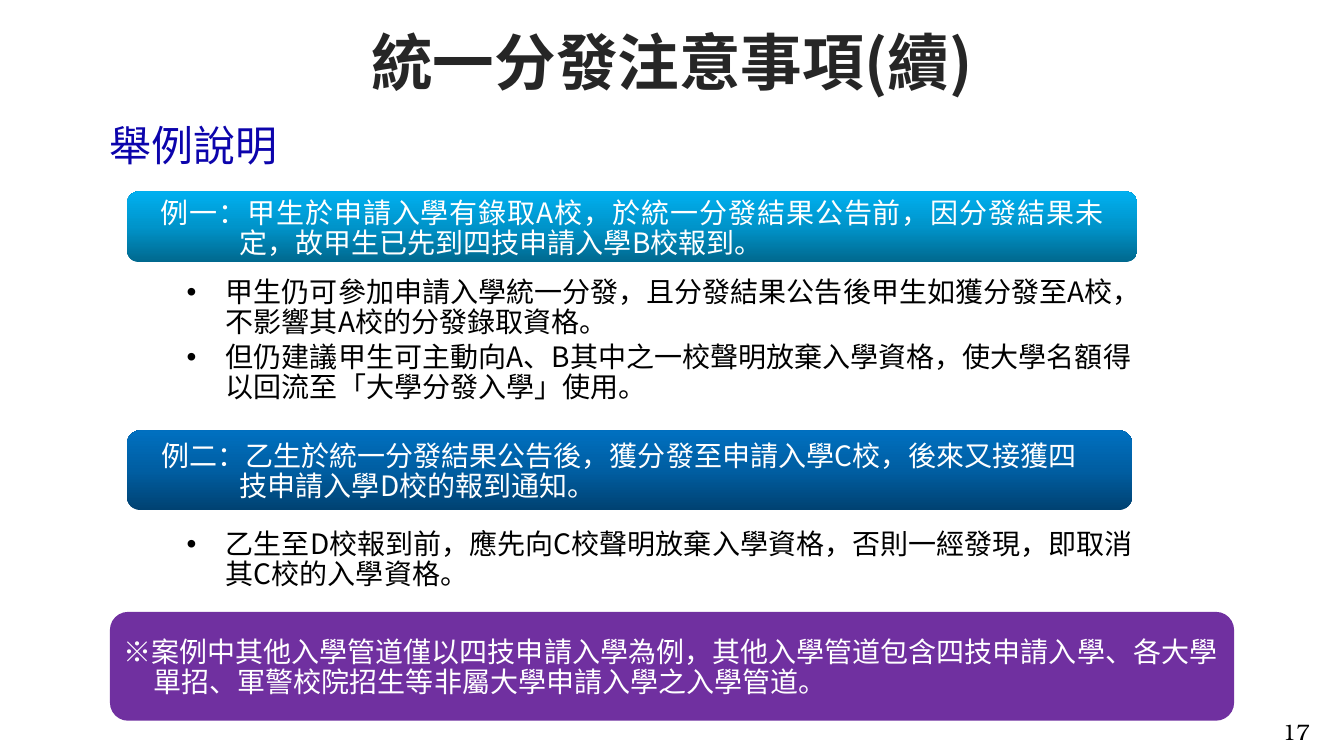
from copy import deepcopy
from dataclasses import dataclass

from lxml import etree
from pptx import Presentation
from pptx.dml.color import RGBColor
from pptx.enum.shapes import MSO_SHAPE
from pptx.enum.text import MSO_ANCHOR, MSO_AUTO_SIZE, PP_ALIGN
from pptx.oxml.ns import qn
from pptx.util import Pt

PX = 9144  # one px is 0.01 inch
SANS = "Noto Sans CJK SC"
SERIF = "TeX Gyre Bonum"

WHITE = RGBColor(0xFF, 0xFF, 0xFF)
BLACK = RGBColor(0x00, 0x00, 0x00)
INK = RGBColor(0x26, 0x26, 0x26)
NAVY = RGBColor(0x0C, 0x04, 0xAC)
PURPLE = RGBColor(0x70, 0x30, 0xA0)
CYANS = (RGBColor(0x00, 0x68, 0x8E), RGBColor(0x00, 0x94, 0xCA), RGBColor(0x00, 0xB0, 0xF0))
BLUES = (RGBColor(0x00, 0x42, 0x72), RGBColor(0x00, 0x5E, 0xA2), RGBColor(0x00, 0x70, 0xC0))

ROUND = MSO_SHAPE.ROUNDED_RECTANGLE
TOP, MIDDLE = MSO_ANCHOR.TOP, MSO_ANCHOR.MIDDLE
LEFT, CENTER, JUSTIFY = PP_ALIGN.LEFT, PP_ALIGN.CENTER, PP_ALIGN.JUSTIFY
NO_FIT = MSO_AUTO_SIZE.NONE


@dataclass
class Box:
    left: int
    top: int
    width: int
    height: int

    def emu(self) -> list[int]:
        return [n * PX for n in (self.left, self.top, self.width, self.height)]


@dataclass
class Style:
    size: int
    color: RGBColor
    font: str = SANS
    bold: bool = False
    align: PP_ALIGN = LEFT
    pitch: float = 0  # line pitch in points, 0 for single
    hang: int = 0
    bullet: bool = False


@dataclass
class Panel:
    box: Box
    fills: tuple[RGBColor, ...]
    pad: int
    style: Style
    text: str


@dataclass
class Points:
    box: Box
    lines: list[str]


ITEM = Style(20, BLACK, pitch=21.5, hang=39, bullet=True)

LISTS = [
    Points(Box(97, 235, 1131, 191), [
        "甲生仍可參加申請入學統一分發，且分發結果公告後甲生如獲分發至A校，不影響其A校的分發錄取資格。",
        "但仍建議甲生可主動向A、B其中之一校聲明放棄入學資格，使大學名額得以回流至「大學分發入學」使用。",
    ]),
    Points(Box(97, 485, 1138, 105), [
        "乙生至D校報到前，應先向C校聲明放棄入學資格，否則一經發現，即取消其C校的入學資格。",
    ]),
]

PANELS = [
    Panel(Box(126, 190, 1002, 70), CYANS, 30,
          Style(20, WHITE, align=JUSTIFY, pitch=21.5, hang=78),
          "例一：甲生於申請入學有錄取A校，於統一分發結果公告前，因分發結果未定，故甲生已先到四技申請入學B校報到。"),
    Panel(Box(126, 427, 997, 79), BLUES, 30,
          Style(20, WHITE, pitch=21.5, hang=78),
          "例二：乙生於統一分發結果公告後，獲分發至申請入學C校，後來又接獲四技申請入學D校的報到通知。"),
    Panel(Box(109, 607, 1115, 108), (PURPLE,), 8,
          Style(20, WHITE, pitch=21.5, hang=30),
          "※案例中其他入學管道僅以四技申請入學為例，其他入學管道包含四技申請入學、各大學單招、軍警校院招生等非屬大學申請入學之入學管道。"),
]


def write(frame, lines: list[str], style: Style) -> None:
    for i, line in enumerate(lines):
        para = frame.paragraphs[0] if i == 0 else frame.add_paragraph()
        props = para._p.get_or_add_pPr()
        if style.bullet:
            para.level = 1
            etree.SubElement(props, qn("a:buFont")).set("typeface", "Arial")
            etree.SubElement(props, qn("a:buChar")).set("char", "•")
        if style.hang:
            props.set("marL", str(style.hang * PX))
            props.set("indent", str(-style.hang * PX))
        para.alignment = style.align
        para.space_before = Pt(0)
        para.space_after = Pt(3.5 if style.bullet else 0)
        if style.pitch:
            para.line_spacing = Pt(style.pitch)
        run = para.add_run()
        run.text = line
        font = run.font
        font.size, font.bold, font.name = Pt(style.size), style.bold, style.font
        font.color.rgb = style.color
        latin = run._r.rPr.find(qn("a:latin"))
        east = etree.Element(qn("a:ea"))
        east.set("typeface", style.font)
        latin.addnext(east)


def setup(frame, pads: tuple[int, int, int, int], anchor: MSO_ANCHOR) -> None:
    frame.word_wrap = True
    frame.auto_size = NO_FIT
    frame.vertical_anchor = anchor
    (frame.margin_left, frame.margin_top,
     frame.margin_right, frame.margin_bottom) = [n * PX for n in pads]


def place(holder, box: Box) -> None:
    holder.left, holder.top, holder.width, holder.height = box.emu()


def shade(fill, colors: tuple[RGBColor, ...]) -> None:
    if len(colors) == 1:
        fill.solid()
        fill.fore_color.rgb = colors[0]
        return
    fill.gradient()
    fill.gradient_angle = 90
    last = fill.gradient_stops[1]._gs
    last.addprevious(deepcopy(last))
    for i, (stop, color) in enumerate(zip(fill.gradient_stops, colors)):
        stop.position = i / (len(colors) - 1)
        stop.color.rgb = color


def panel(slide, part: Panel) -> None:
    shape = slide.shapes.add_shape(ROUND, *part.box.emu())
    shape.shadow.inherit = False
    shade(shape.fill, part.fills)
    shape.line.fill.background()
    setup(shape.text_frame, (part.pad, 4, part.pad, 0), MIDDLE)
    write(shape.text_frame, [part.text], part.style)


def label(slide, box: Box, text: str, style: Style) -> None:
    frame = slide.shapes.add_textbox(*box.emu()).text_frame
    setup(frame, (10, 5, 10, 5), TOP)
    write(frame, [text], style)


def main() -> None:
    prs = Presentation()
    prs.slide_width, prs.slide_height = 1333 * PX, 750 * PX
    slide = prs.slides.add_slide(prs.slide_layouts[3])
    title, *bodies = slide.placeholders

    # Title
    place(title, Box(212, 25, 909, 71))
    setup(title.text_frame, (10, 5, 10, 5), MIDDLE)
    write(title.text_frame, ["統一分發注意事項(續)"],
          Style(44, INK, bold=True, align=CENTER))

    # Bullet lists
    for body, points in zip(bodies, LISTS):
        place(body, points.box)
        setup(body.text_frame, (88, 41, 88, 16), TOP)
        write(body.text_frame, points.lines, ITEM)

    # Case banners and closing remark
    for part in PANELS:
        panel(slide, part)

    # Heading and page number
    label(slide, Box(99, 133, 192, 43), "舉例說明", Style(30, NAVY, pitch=22))
    label(slide, Box(1262, 708, 69, 37), "17", Style(16, BLACK, font=SERIF))

    prs.save("out.pptx")


if __name__ == "__main__":
    main()
